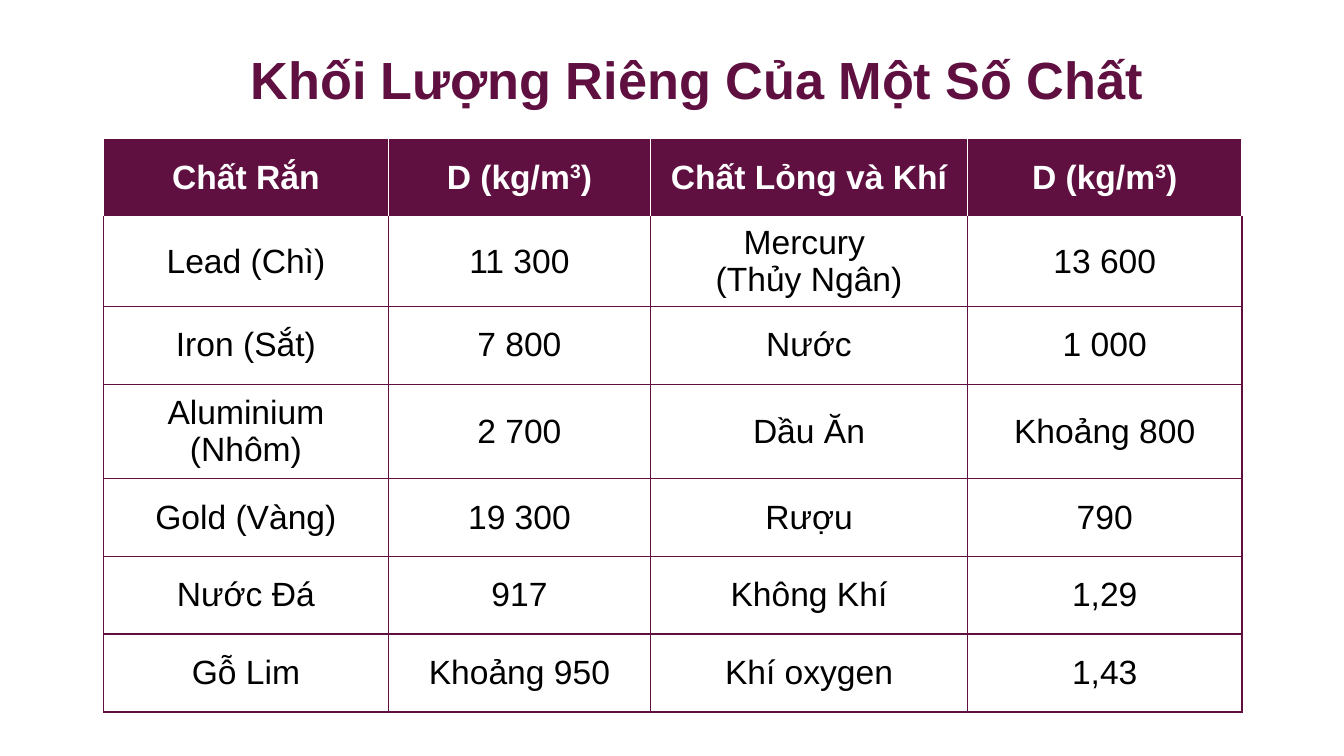
import pptx
import pptx.dml.color
import pptx.enum.text
import pptx.oxml
import pptx.oxml.ns
import pptx.util
from pptx.util import Inches

PLUM, WHITE, BLACK = "5F0F40", "FFFFFF", "000000"
CENTER = pptx.enum.text.PP_ALIGN.CENTER
ANCHOR = pptx.enum.text.MSO_ANCHOR

SLIDE_WIDTH = 10
COLUMN_WIDTHS = [2.12, 1.95, 2.36, 2.04]
ROW_HEIGHTS = [0.58, 0.67, 0.58, 0.7, 0.58, 0.58, 0.58]

# Each cell is a list of paragraphs split at "\n"; "^" marks a raised part
DENSITY = "D (kg/m^3^)"
ROWS = [
    ["Chất Rắn", DENSITY, "Chất Lỏng và Khí", DENSITY],
    ["Lead (Chì)", "11 300", "Mercury \n(Thủy Ngân)", "13 600"],
    ["Iron (Sắt)", "7 800", "Nước", "1 000"],
    ["Aluminium (Nhôm)", "2 700", "Dầu Ăn", "Khoảng 800"],
    ["Gold (Vàng)", "19 300", "Rượu", "790"],
    ["Nước Đá", "917", "Không Khí", "1,29"],
    ["Gỗ Lim", "Khoảng 950", "Khí oxygen", "1,43"],
]


def rgb(color):
    return pptx.dml.color.RGBColor.from_string(color)


def add_run(p, text, size, color, bold, raised=False):
    r = p.add_run()
    r.text = text
    r.font.name = "Arial"
    r.font.size = pptx.util.Pt(size)
    r.font.bold = bold
    r.font.color.rgb = rgb(color)
    if raised:
        r.font._element.set("baseline", "30000")


def write_text(tf, text, size, color, bold):
    for i, line in enumerate(text.split("\n")):
        p = tf.add_paragraph() if i else tf.paragraphs[0]
        p.alignment = CENTER
        for j, part in enumerate(line.split("^")):
            add_run(p, part, size, color, bold, raised=j % 2 == 1)


def set_borders(cell, colors):
    tcPr = cell._tc.get_or_add_tcPr()
    for side, color in zip("LRTB", colors):
        tcPr.append(pptx.oxml.parse_xml(
            f'<a:ln{side} {pptx.oxml.ns.nsdecls("a")} w="12700"><a:solidFill>'
            f'<a:srgbClr val="{color}"/></a:solidFill></a:ln{side}>'))


def add_title(s, text):
    box = s.shapes.add_textbox(Inches(1.71), Inches(0.32), Inches(6.95), Inches(0.6))
    tf = box.text_frame
    tf.word_wrap = True
    tf.vertical_anchor = ANCHOR.BOTTOM
    tf.margin_left = tf.margin_right = tf.margin_top = tf.margin_bottom = Inches(0.1)
    write_text(tf, text, 28, PLUM, True)


def add_density_table(s):
    table = s.shapes.add_table(
        len(ROWS), len(COLUMN_WIDTHS), Inches(0.77), Inches(1.03),
        Inches(sum(COLUMN_WIDTHS)), Inches(sum(ROW_HEIGHTS))).table
    table.horz_banding = False
    for column, width in zip(table.columns, COLUMN_WIDTHS):
        column.width = Inches(width)
    for i, (row, height) in enumerate(zip(ROWS, ROW_HEIGHTS)):
        table.rows[i].height = Inches(height)
        header = i == 0
        side = WHITE if header else PLUM
        top = WHITE if i <= 1 else PLUM
        for j, text in enumerate(row):
            cell = table.cell(i, j)
            cell.vertical_anchor = ANCHOR.MIDDLE
            set_borders(cell, [side, side, top, side])
            if header:
                cell.fill.solid()
                cell.fill.fore_color.rgb = rgb(PLUM)
            else:
                cell.fill.background()
            write_text(cell.text_frame, text, 18, WHITE if header else BLACK, header)


def main():
    # Widescreen slide, 16 by 9
    prs = pptx.Presentation()
    prs.slide_width = Inches(SLIDE_WIDTH)
    prs.slide_height = Inches(SLIDE_WIDTH * 9 / 16)
    s = prs.slides.add_slide(prs.slide_layouts[6])

    # Table of densities, then the title above it
    add_density_table(s)
    add_title(s, "Khối Lượng Riêng Của Một Số Chất")
    prs.save("out.pptx")


if __name__ == "__main__":
    main()
